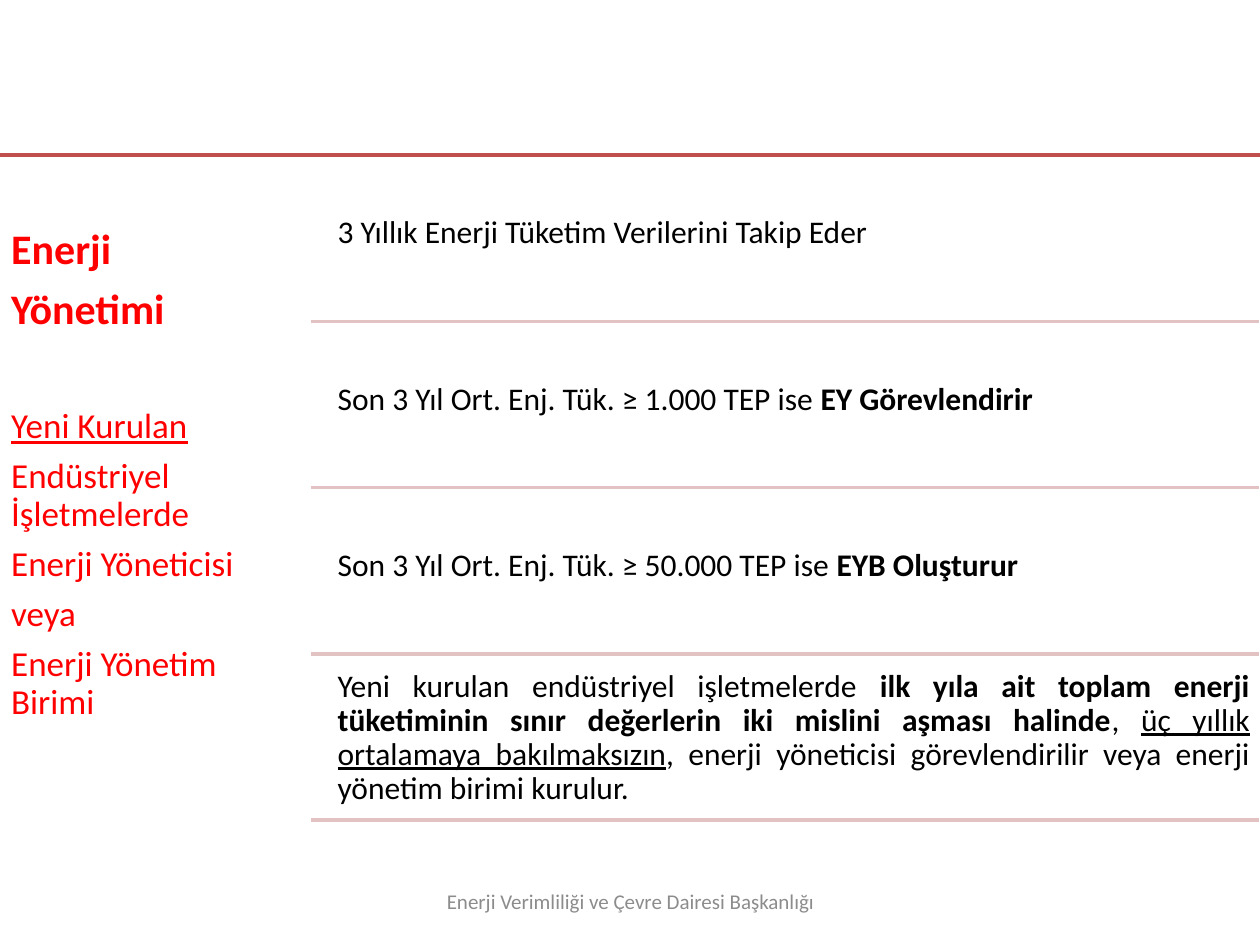
import pptx
import pptx.util
import pptx.dml.color
import pptx.enum.shapes
import pptx.enum.text
import pptx.oxml.ns
import lxml.etree

Inches, Pt = pptx.util.Inches, pptx.util.Pt
Align = pptx.enum.text.PP_ALIGN
Anchor = pptx.enum.text.MSO_ANCHOR
COLORS = {"red": "FF0000", "black": "000000", "gray": "8C8C8C",
          "rule": "C0504D", "pale": "E2C2C2"}

deck = pptx.Presentation()
deck.slide_width, deck.slide_height = Inches(10), Inches(7.5)
slide = deck.slides.add_slide(deck.slide_layouts[6])


def write(paras, box, color, inset=0.1, anchor=Anchor.TOP, align=Align.LEFT,
          space=None):
    """Each paragraph is (size, space after, runs); a run is (text, marks)."""
    frame = slide.shapes.add_textbox(*map(Inches, box)).text_frame
    frame.word_wrap = True
    frame.vertical_anchor = anchor
    frame.margin_left = frame.margin_right = Inches(inset)
    frame.margin_top = frame.margin_bottom = Inches(inset)
    for i, (size, after, runs) in enumerate(paras):
        para = frame.paragraphs[0] if i == 0 else frame.add_paragraph()
        para.alignment = align
        para.line_spacing = space
        para.space_after = Pt(after)
        for words, marks in runs:
            run = para.add_run()
            run.text = words
            font = run.font
            font.name, font.size = "Calibri", Pt(size)
            font.bold, font.underline = "b" in marks, "u" in marks
            font.color.rgb = pptx.dml.color.RGBColor.from_string(COLORS[color])


def rule(left, right, top, color):
    line = slide.shapes.add_connector(
        pptx.enum.shapes.MSO_CONNECTOR.STRAIGHT,
        Inches(left), Inches(top), Inches(right), Inches(top))
    line.line.width = Pt(2)
    line.line.color.rgb = pptx.dml.color.RGBColor.from_string(COLORS[color])
    lxml.etree.SubElement(line._element.spPr, pptx.oxml.ns.qn("a:effectLst"))


# Footer
write([(12, 0, [("Enerji Verimliliği ve Çevre Dairesi Başkanlığı", "")])],
      (3.42, 6.95, 3.17, 0.4), "gray", inset=0.05, anchor=Anchor.MIDDLE,
      align=Align.CENTER)

# Top rule
rule(-0.01, 10, 1.23, "rule")

# Left column: heading, wide gap, then the topic
side = [(24, 8.4, [("Enerji", "b")]),
        (24, 43, [("Yönetimi", "b")]),
        (20, 7, [("Yeni Kurulan", "u")])]
for words in ("Endüstriyel İşletmelerde", "Enerji Yöneticisi", "veya",
              "Enerji Yönetim Birimi"):
    side.append((20, 7, [(words, "")]))
write(side, (-0.01, 1.71, 2.48, 4.87), "red", space=0.9)

# Right column: one row per rule; short rows start lower
rows = [
    (0.36, Align.LEFT, [("3 Yıllık Enerji Tüketim Verilerini Takip Eder", "")]),
    (0.36, Align.LEFT, [("Son 3 Yıl Ort. Enj. Tük. ≥ 1.000 TEP ise ", ""),
                        ("EY Görevlendirir", "b")]),
    (0.36, Align.LEFT, [("Son 3 Yıl Ort. Enj. Tük. ≥ 50.000 TEP ise ", ""),
                        ("EYB Oluşturur", "b")]),
    (0, Align.JUSTIFY, [
        ("Yeni kurulan endüstriyel işletmelerde ", ""),
        ("ilk yıla ait toplam enerji tüketiminin sınır değerlerin iki "
         "mislini aşması halinde", "b"),
        (", ", ""),
        ("üç yıllık ortalamaya bakılmaksızın", "u"),
        (", enerji yöneticisi görevlendirilir veya enerji yönetim birimi "
         "kurulur.", "")]),
]
for i, (drop, align, runs) in enumerate(rows):
    top = 1.29 + 1.32 * i
    write([(18, 6.3, runs)], (2.61, top + drop, 7.38, 1.26 - drop), "black",
          inset=0.07, align=align, space=0.9)
    rule(2.47, 9.99, top + 1.26, "pale")

deck.save("out.pptx")
